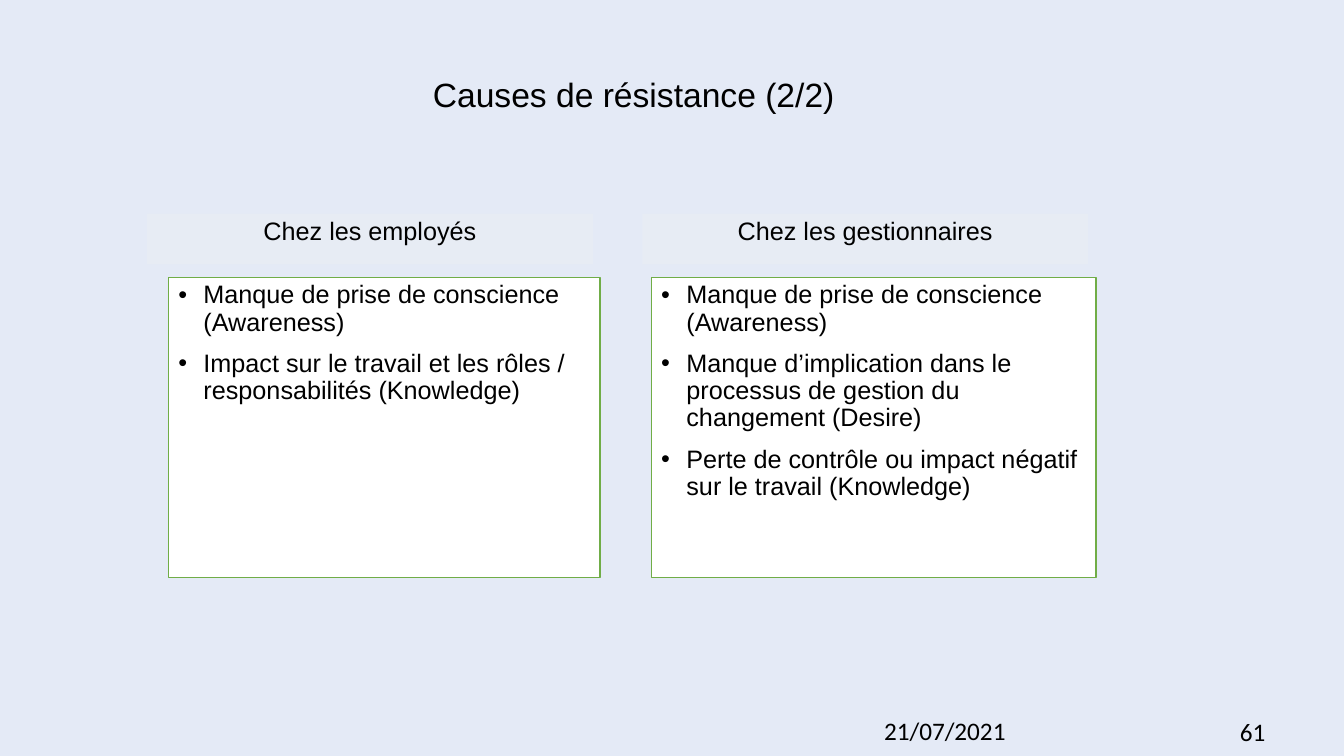
from dataclasses import dataclass

from lxml.etree import SubElement
from pptx import Presentation
from pptx.dml.color import RGBColor as Rgb
from pptx.enum.shapes import MSO_SHAPE as Preset
from pptx.enum.text import MSO_ANCHOR as Anchor, PP_ALIGN as Align
from pptx.oxml.ns import qn
from pptx.util import Inches, Pt


@dataclass(frozen=True)
class Theme:
    """Colours, fonts and type sizes of the slide."""
    backdrop: str = "E4EAF6"
    ink: str = "000000"
    heading_fill: str = "F2F2F2"
    heading_opacity: int = 25
    panel_fill: str = "FFFFFF"
    panel_border: str = "70AD47"
    text_font: str = "Arial"
    footer_font: str = "Calibri"
    title_size: int = 24
    body_size: int = 18


THEME = Theme()
WIDTH, HEIGHT = Inches(13.33), Inches(7.5)
HEADING_TOP, HEADING_WIDTH, HEADING_HEIGHT = 28.27, 33.16, 6.67
PANEL_TOP, PANEL_HEIGHT = 36.67, 39.73
FOOTER_HEIGHT = 5.33
CAUSES = [
    ("Chez les employés", 10.95, 12.53, 32.11, [
        "Manque de prise de conscience (Awareness)",
        "Impact sur le travail et les rôles / responsabilités (Knowledge)",
    ]),
    ("Chez les gestionnaires", 47.79, 48.46, 33.08, [
        "Manque de prise de conscience (Awareness)",
        "Manque d’implication dans le processus de gestion du changement (Desire)",
        "Perte de contrôle ou impact négatif sur le travail (Knowledge)",
    ]),
]


def area(left, top, width, height):
    """Convert percentages of the slide into lengths."""
    return (int(WIDTH * left / 100), int(HEIGHT * top / 100),
            int(WIDTH * width / 100), int(HEIGHT * height / 100))


def style(paragraph, size=THEME.body_size, font=THEME.text_font, align=Align.LEFT, spacing=0.9):
    """Format a whole paragraph."""
    paragraph.alignment = align
    paragraph.line_spacing = spacing
    paragraph.font.size = Pt(size)
    paragraph.font.name = font
    paragraph.font.color.rgb = Rgb.from_string(THEME.ink)


def add_bullet(paragraph):
    """Give a paragraph a hanging bullet."""
    properties = paragraph._p.get_or_add_pPr()
    properties.set("marL", str(Inches(0.25)))
    properties.set("indent", str(-Inches(0.25)))
    SubElement(properties, qn("a:buFont"), typeface=THEME.text_font)
    SubElement(properties, qn("a:buChar"), char="•")


def add_block(slide, place, colour):
    """Add a filled rectangle with text starting at its top."""
    block = slide.shapes.add_shape(Preset.RECTANGLE, *area(*place))
    block.shadow.inherit = False
    block.fill.solid()
    block.fill.fore_color.rgb = Rgb.from_string(colour)
    block.text_frame.word_wrap = True
    block.text_frame.vertical_anchor = Anchor.TOP
    return block


def add_heading(slide, left, wording):
    """Add the translucent heading of a column."""
    heading = add_block(slide, (left, HEADING_TOP, HEADING_WIDTH, HEADING_HEIGHT), THEME.heading_fill)
    heading.line.fill.background()
    tint = heading._element.spPr.find(qn("a:solidFill"))[0]
    SubElement(tint, qn("a:alpha"), val=str(THEME.heading_opacity * 1000))
    heading.text_frame.text = wording
    style(heading.text_frame.paragraphs[0], align=Align.CENTER)


def add_panel(slide, left, width, causes):
    """Add the bordered list of causes of a column."""
    panel = add_block(slide, (left, PANEL_TOP, width, PANEL_HEIGHT), THEME.panel_fill)
    panel.line.color.rgb = Rgb.from_string(THEME.panel_border)
    panel.line.width = Pt(1)
    panel.text_frame.text = "\n".join(causes)
    for position, cause in enumerate(panel.text_frame.paragraphs):
        add_bullet(cause)
        style(cause)
        cause.space_before = Pt(10 if position else 0)


def add_footer(slide, left, top, width, wording):
    """Add a footer entry."""
    footer = slide.shapes.add_textbox(*area(left, top, width, FOOTER_HEIGHT)).text_frame
    footer.word_wrap = True
    footer.text = wording
    style(footer.paragraphs[0], font=THEME.footer_font, spacing=1.0)


def set_title(slide, wording):
    """Place and format the title."""
    title = slide.shapes.title
    title.left, title.top, title.width, title.height = area(12.75, 6.4, 68.79, 12.67)
    title.text_frame.text = wording
    title.text_frame.vertical_anchor = Anchor.MIDDLE
    style(title.text_frame.paragraphs[0], THEME.title_size, align=Align.CENTER)


def main():
    """Build and save the slide."""
    deck = Presentation()
    deck.slide_width, deck.slide_height = WIDTH, HEIGHT
    slide = deck.slides.add_slide(deck.slide_layouts[5])
    slide.background.fill.solid()
    slide.background.fill.fore_color.rgb = Rgb.from_string(THEME.backdrop)
    set_title(slide, "Causes de résistance (2/2)")
    for group, heading_left, panel_left, panel_width, causes in CAUSES:
        add_heading(slide, heading_left, group)
        add_panel(slide, panel_left, panel_width, causes)
    add_footer(slide, 65.04, 94, 22.5, "21/07/2021")
    add_footer(slide, 91.52, 94.13, 8.25, "61")
    deck.save("out.pptx")


if __name__ == "__main__":
    main()
